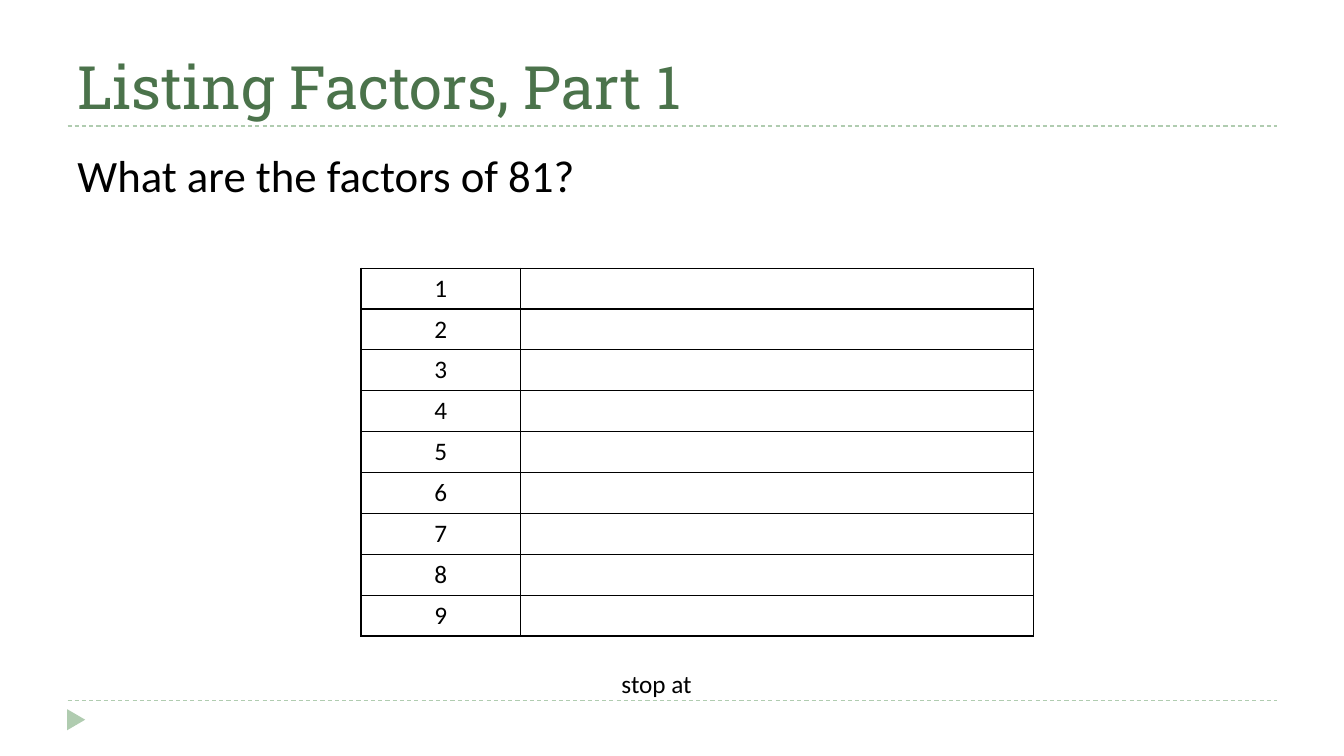
from lxml import etree
from pptx import Presentation
from pptx import util as u
from pptx.dml.color import RGBColor
from pptx.enum import dml, shapes, text
from pptx.oxml import ns

WIDTH, HEIGHT = 13.33, 7.5
MARGIN, RULE_WIDTH = 0.67, 12
BLACK, WHITE, SAGE, FOREST = "000000", "FFFFFF", "B0CCB0", "4B734B"
BODY_FONT, TITLE_FONT = "Calibri", "Roboto Slab"


def colour(hex_string):
    """Turn a hex string into a colour."""
    return RGBColor.from_string(hex_string)


def inches(*lengths):
    """Convert lengths in inches."""
    return [u.Inches(length) for length in lengths]


def write(frame, words, size, ink=BLACK, font=BODY_FONT, align=text.PP_ALIGN.LEFT):
    """Write one styled run in the first paragraph of a frame."""
    paragraph = frame.paragraphs[0]
    paragraph.alignment = align
    run = paragraph.add_run()
    run.text = words
    run.font.size = u.Pt(size)
    run.font.name = font
    run.font.color.rgb = colour(ink)


def add_label(slide, box, words, size, anchor=text.MSO_ANCHOR.TOP, **style):
    """Place a wrapped line of text in a box."""
    frame = slide.shapes.add_textbox(*inches(*box)).text_frame
    frame.word_wrap = True
    frame.vertical_anchor = anchor
    write(frame, words, size, **style)


def add_rule(slide, left, top, width):
    """Draw a dashed horizontal rule."""
    rule = slide.shapes.add_connector(
        shapes.MSO_CONNECTOR.STRAIGHT, *inches(left, top, left + width, top))
    rule.line.color.rgb = colour(SAGE)
    rule.line.width = u.Pt(0.75)
    rule.line.dash_style = dml.MSO_LINE.DASH
    etree.SubElement(rule._element.spPr, ns.qn("a:effectLst"))


def add_frame(slide, left, top, width, bottom):
    """Draw the two rules and the corner marker below them."""
    for height in (top, bottom):
        add_rule(slide, left, height, width)
    marker = slide.shapes.add_shape(
        shapes.MSO_SHAPE.ISOSCELES_TRIANGLE,
        *inches(left - 0.02, bottom + 0.1, 0.21, 0.18))
    marker.rotation = 90
    marker.shadow.inherit = False
    marker.fill.solid()
    marker.fill.fore_color.rgb = colour(SAGE)
    marker.line.fill.background()


def style_cell(cell):
    """Give a cell a white fill and thin black borders."""
    properties = cell._tc.get_or_add_tcPr()
    for side in ("a:lnL", "a:lnR", "a:lnT", "a:lnB"):
        border = etree.SubElement(properties, ns.qn(side), w=str(u.Pt(1)))
        ink = etree.SubElement(border, ns.qn("a:solidFill"))
        etree.SubElement(ink, ns.qn("a:srgbClr"), val=BLACK)
    cell.fill.solid()
    cell.fill.fore_color.rgb = colour(WHITE)


def add_factor_table(slide, left, top, width, height, factors):
    """List the candidate factors beside blank answer cells."""
    table = slide.shapes.add_table(
        len(factors), 2, *inches(left, top, width, height)).table
    table.first_row = table.horz_banding = False
    for column, share in zip(table.columns, (0.237, 0.763)):
        column.width = u.Inches(width * share)
    for row, factor in zip(table.rows, factors):
        row.height = u.Inches(height / len(factors))
        for cell in row.cells:
            style_cell(cell)
        write(row.cells[0].text_frame, str(factor), 18, align=text.PP_ALIGN.CENTER)


def build_factor_slide(slide):
    """Lay out the title, question, factor table and closing prompt."""
    add_frame(slide, MARGIN, 1.25, RULE_WIDTH, 6.95)
    add_label(slide, (MARGIN, 0.17, RULE_WIDTH, 1.08), "Listing Factors, Part 1",
              42.7, text.MSO_ANCHOR.BOTTOM, ink=FOREST, font=TITLE_FONT)
    add_factor_table(slide, 3.58, 2.66, 6.67, 3.65, range(1, 10))
    add_label(slide, (2.33, 6.58, 8.42, 0.4), "stop at ", 18,
              align=text.PP_ALIGN.CENTER)
    add_label(slide, (MARGIN, 1.42, 9, 0.67), "What are the factors of 81?", 32)


def main():
    """Build and save the presentation."""
    deck = Presentation()
    deck.slide_width, deck.slide_height = inches(WIDTH, HEIGHT)
    build_factor_slide(deck.slides.add_slide(deck.slide_layouts[6]))
    deck.save("out.pptx")


if __name__ == "__main__":
    main()
